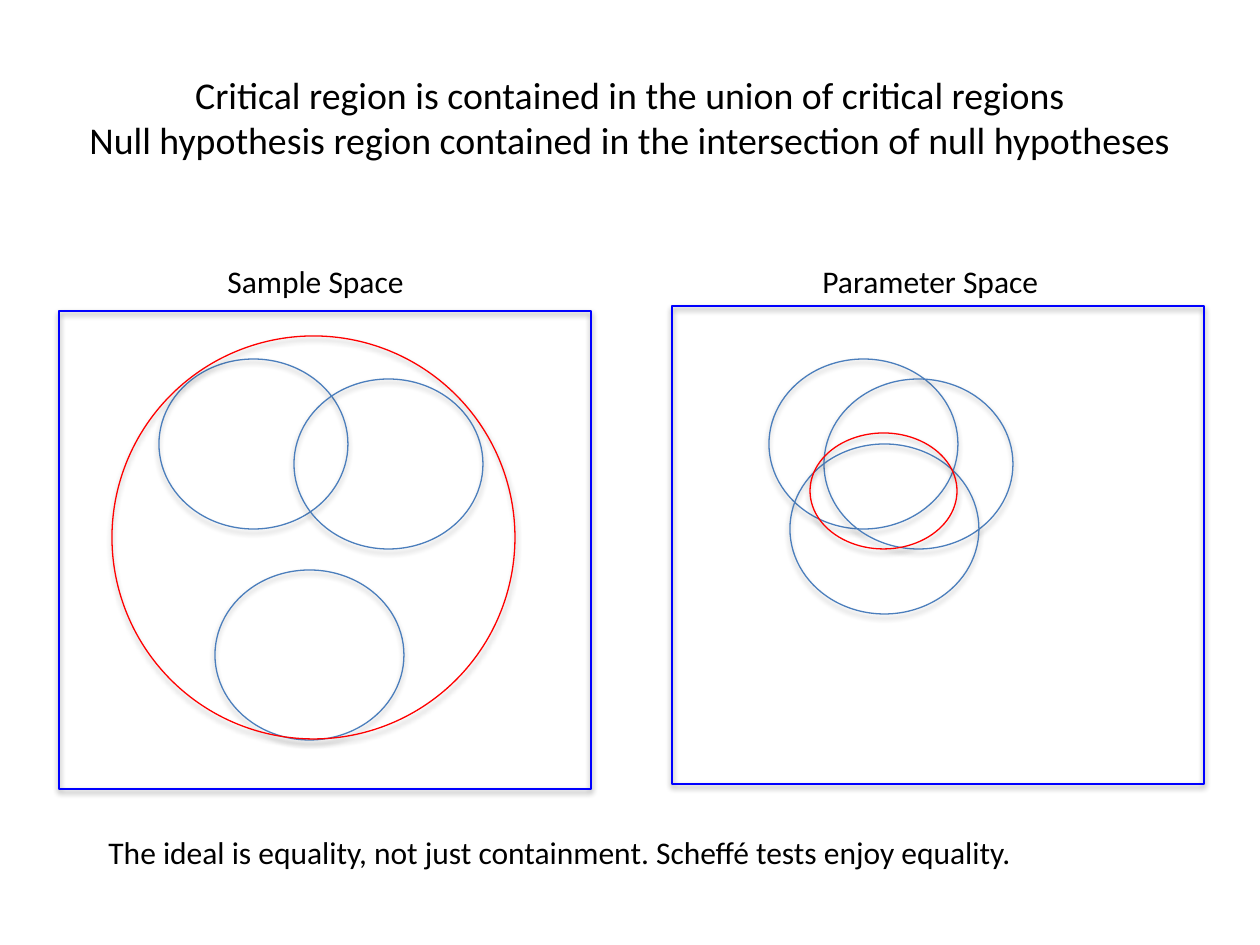
from lxml.etree import SubElement
from pptx import Presentation
from pptx.dml.color import RGBColor
from pptx.enum.shapes import MSO_SHAPE as SHAPE
from pptx.enum.text import MSO_ANCHOR as ANCHOR, MSO_AUTO_SIZE as AUTO, PP_ALIGN as ALIGN
from pptx.oxml.ns import qn
from pptx.util import Pt

PX = 914400 / 126
COLORS = {"text": "000000", "set": "4B7EBC", "frame": "0000FF", "region": "FF0000"}

TITLE = ("Critical region is contained in the union of critical regions\v"
         "Null hypothesis region contained in the intersection of null hypotheses")
NOTE = "The ideal is equality, not just containment. Scheffé tests enjoy equality."
SET_SIZE = (189, 170)
FRAME_SIZE = (532, 478)
SPACES = [
    {"label": "Sample Space", "label_box": (215, 256, 204, 50),
     "frame": (59, 311), "sets": [(159, 359), (294, 379), (215, 570)],
     "region": (112, 336, 403, 403)},
    {"label": "Parameter Space", "label_box": (810, 256, 243, 50),
     "frame": (672, 306), "sets": [(769, 359), (824, 379), (790, 444)],
     "region": (810, 433, 147, 116)},
]


def emu(box):
    return [round(v * PX) for v in box]


def add_outline(s, kind, box, color, width):
    sp = s.shapes.add_shape(kind, *emu(box))
    sp.fill.background()
    sp.line.color.rgb = RGBColor.from_string(COLORS[color])
    sp.line.width = Pt(width)
    sp.shadow.inherit = False
    effects = sp._element.spPr.find(qn("a:effectLst"))
    shadow = SubElement(effects, qn("a:outerShdw"), blurRad="39370", dist="22860",
                        dir="5400000", rotWithShape="0")
    black = SubElement(shadow, qn("a:srgbClr"), val="000000")
    SubElement(black, qn("a:alpha"), val="35000")


def add_text(s, text, box, size=18, title=False):
    tf = s.shapes.add_textbox(*emu(box)).text_frame
    tf.word_wrap = title
    tf.auto_size = AUTO.NONE if title else AUTO.SHAPE_TO_FIT_TEXT
    tf.vertical_anchor = ANCHOR.MIDDLE if title else ANCHOR.TOP
    p = tf.paragraphs[0]
    p.text = text
    p.alignment = ALIGN.CENTER if title else ALIGN.LEFT
    p.font.name = "Calibri"
    p.font.size = Pt(size)
    p.font.color.rgb = RGBColor.from_string(COLORS["text"])


prs = Presentation()
prs.slide_width, prs.slide_height = emu((1260, 945))
s = prs.slides.add_slide(prs.slide_layouts[6])

for space in SPACES:
    for corner in space["sets"]:
        add_outline(s, SHAPE.OVAL, corner + SET_SIZE, "set", 0.75)
for space in SPACES:
    add_outline(s, SHAPE.RECTANGLE, space["frame"] + FRAME_SIZE, "frame", 1.5)
for space in SPACES:
    add_text(s, space["label"], space["label_box"])
add_text(s, TITLE, (63, 38, 1134, 158), 21.6, title=True)
for space in SPACES:
    add_outline(s, SHAPE.OVAL, space["region"], "region", 0.75)
add_text(s, NOTE, (96, 827, 937, 50))

prs.save("out.pptx")
